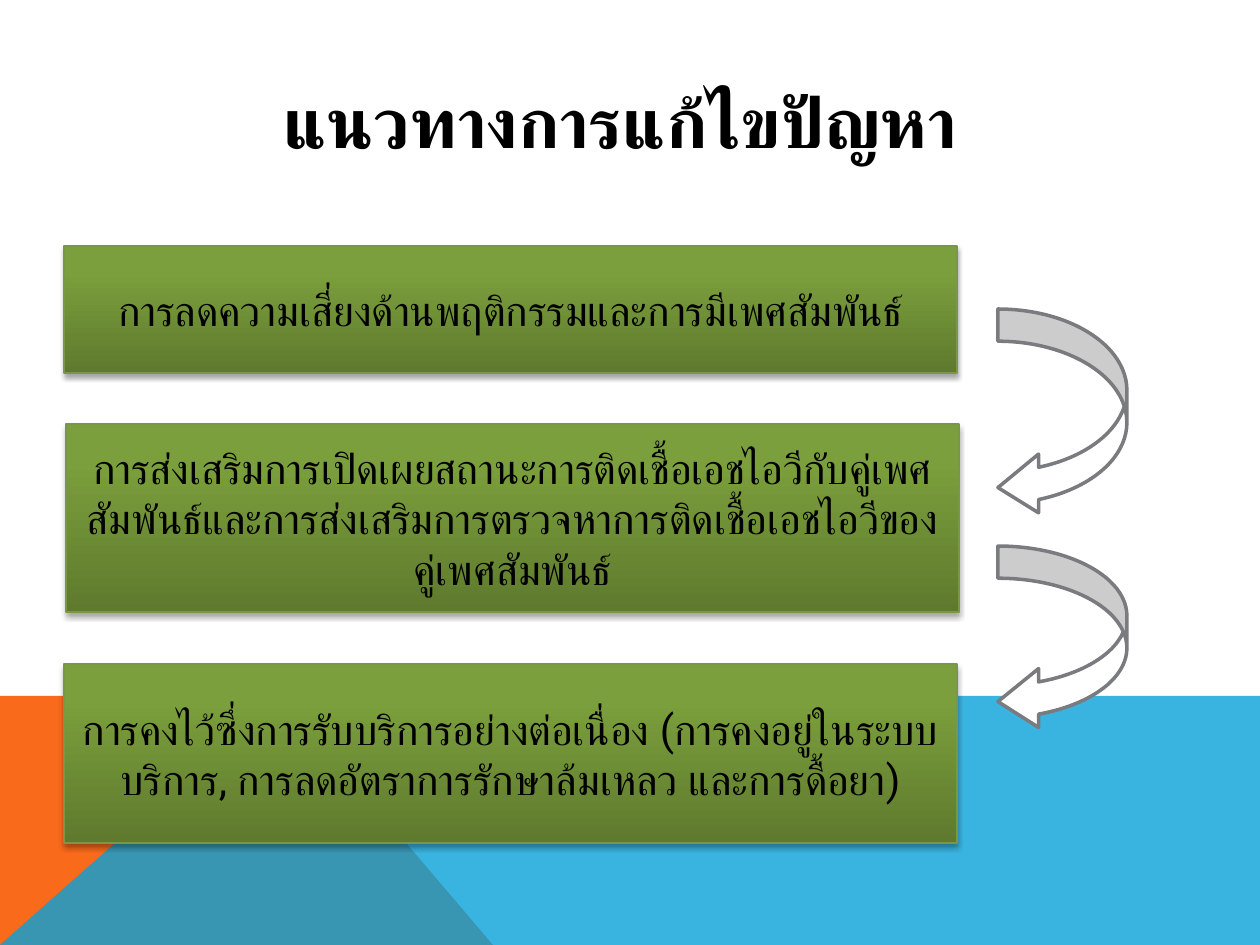
import pptx
import pptx.util
import pptx.dml.color
import pptx.enum.shapes
import pptx.enum.text
import pptx.oxml
import pptx.oxml.ns
from lxml import etree

PX = 914400 / 126
FONT = "Roboto"
KIND = pptx.enum.shapes.MSO_SHAPE
qn = pptx.oxml.ns.qn

# Content
TITLE = "แนวทางการแก้ไขปัญหา"
# text, left, top, height
STEPS = [
    ("การลดความเสี่ยงด้านพฤติกรรมและการมีเพศสัมพันธ์", 64, 246, 127),
    ("การส่งเสริมการเปิดเผยสถานะการติดเชื้อเอชไอวีกับคู่เพศสัมพันธ์"
     "และการส่งเสริมการตรวจหาการติดเชื้อเอชไอวีของคู่เพศสัมพันธ์", 66, 424, 188),
    ("การคงไว้ซึ่งการรับบริการอย่างต่อเนื่อง (การคงอยู่ในระบบบริการ, "
     "การลดอัตราการรักษาล้มเหลว และการดื้อยา)", 64, 664, 179),
]
WIDE = 893
ARROWS = [(309, 208), (546, 185)]  # top, height
BENDS = (0.25, 0.456, 0.315)
# points, colour, opacity in percent
BANDS = [
    ([(0, 945), (0, 696), (281, 696), (493, 945)], "F96A1B", 100),
    ([(0, 945), (281, 696), (1260, 696), (1260, 945)], "08A1D9", 80),
]
STOPS = [(0, "5F7A2E"), (80, "7B9F3C"), (100, "7CA13B")]


def emu(px):
    return pptx.util.Emu(round(px * PX))


def rgb(code):
    return pptx.dml.color.RGBColor.from_string(code)


def sub(node, tag, **attrs):
    return etree.SubElement(node, qn(tag), {k: str(v) for k, v in attrs.items()})


def write(shape, text, size, bold=False):
    frame = shape.text_frame
    frame.text = text
    frame.word_wrap = True
    frame.auto_size = pptx.enum.text.MSO_AUTO_SIZE.NONE
    frame.vertical_anchor = pptx.enum.text.MSO_ANCHOR.MIDDLE
    para = frame.paragraphs[0]
    para.alignment = pptx.enum.text.PP_ALIGN.CENTER
    run = para.runs[0]
    run.font.size = pptx.util.Pt(size)
    run.font.bold = bold
    run.font.name = FONT
    run.font.color.rgb = rgb("000000")
    sub(run.font._element, "a:cs", typeface=FONT)


def paint(shape, code):
    shape.shadow.inherit = False
    shape.fill.solid()
    shape.fill.fore_color.rgb = rgb(code)


def shade(shape):
    """Vertical gradient, dark at the foot, with a soft shadow below."""
    shape.fill.gradient()
    shape.fill.gradient_angle = 90
    props = shape._element.spPr
    stops = props.find(qn("a:gradFill")).find(qn("a:gsLst"))
    for old in list(stops):
        stops.remove(old)
    for pos, code in STOPS:
        sub(sub(stops, "a:gs", pos=pos * 1000), "a:srgbClr", val=code)
    shape.shadow.inherit = False
    drop = sub(props.find(qn("a:effectLst")), "a:outerShdw",
               blurRad=pptx.util.Pt(3.1), dist=pptx.util.Pt(1.8),
               dir=90 * 60000, rotWithShape=0)
    sub(sub(drop, "a:srgbClr", val="000000"), "a:alpha", val=35000)


def edge(shape, code, width):
    shape.line.color.rgb = rgb(code)
    shape.line.width = pptx.util.Pt(width)


def main():
    deck = pptx.Presentation()
    deck.slide_width, deck.slide_height = emu(1260), emu(945)
    slide = deck.slides.add_slide(deck.slide_layouts[5])
    shapes = slide.shapes

    # Title
    title = shapes.title
    title.left, title.top, title.width, title.height = map(emu, (242, 53, 756, 136))
    write(title, TITLE, 40, True)

    # Coloured bands at the foot
    for points, code, alpha in BANDS:
        path = shapes.build_freeform(*points[0], scale=PX)
        path.add_line_segments(points[1:], close=True)
        band = path.convert_to_shape()
        paint(band, code)
        band.line.fill.background()
        if alpha < 100:
            tint = band._element.spPr.find(qn("a:solidFill"))[0]
            sub(tint, "a:alpha", val=alpha * 1000)

    # Step boxes
    for text, left, top, high in STEPS:
        box = shapes.add_shape(KIND.RECTANGLE, *map(emu, (left, top, WIDE, high)))
        shade(box)
        edge(box, "7A9746", 0.75)
        write(box, text, 24)

    # Arrows from step to step
    for top, high in ARROWS:
        arrow = shapes.add_shape(KIND.CURVED_LEFT_ARROW, *map(emu, (998, top, 129, high)))
        for i, bend in enumerate(BENDS):
            arrow.adjustments[i] = bend
        paint(arrow, "FFFFFF")
        edge(arrow, "797B7E", 2)

    deck.save("out.pptx")


if __name__ == "__main__":
    main()
